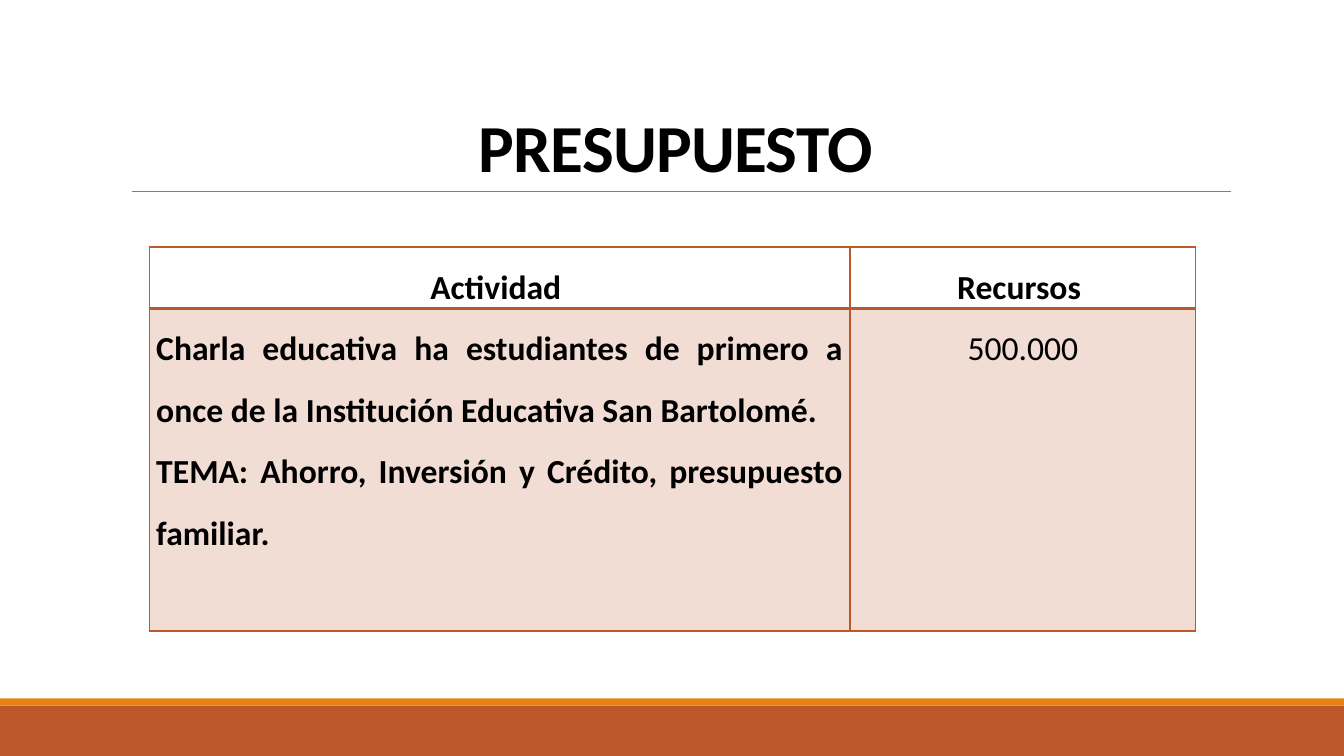
import pptx
import pptx.dml.color
import pptx.enum.shapes
import pptx.enum.text
import pptx.oxml
import pptx.oxml.ns
import pptx.util
from lxml import etree

Inches, Pt = pptx.util.Inches, pptx.util.Pt
ALIGN = pptx.enum.text.PP_ALIGN
qn = pptx.oxml.ns.qn

COLORS = {"rust": "BD582C", "orange": "E48312", "rule": "808080", "text": "000000"}
FONT = "Calibri"
ROWS = [
    [["Actividad "], ["Recursos "]],
    [
        [
            "Charla educativa ha estudiantes de primero a once de la "
            "Institución Educativa San Bartolomé. ",
            "TEMA: Ahorro, Inversión y Crédito, presupuesto familiar.",
        ],
        ["500.000"],
    ],
]


def rgb(name):
    return pptx.dml.color.RGBColor.from_string(COLORS[name])


def write(p, text, size, align, spacing, bold=True):
    p.alignment = align
    p.line_spacing = spacing
    r = p.add_run()
    r.text = text
    r.font.name = FONT
    r.font.size = Pt(size)
    r.font.bold = bold
    r.font.color.rgb = rgb("text")
    return r


def add_footer_bands(slide, left, top, width, height):
    stripe = 0.07
    bands = [("rust", top + stripe, height - stripe), ("orange", top, stripe)]
    for color, y, h in bands:
        sp = slide.shapes.add_shape(
            pptx.enum.shapes.MSO_SHAPE.RECTANGLE,
            Inches(left), Inches(y), Inches(width), Inches(h))
        sp.shadow.inherit = False
        sp.fill.solid()
        sp.fill.fore_color.rgb = rgb(color)
        sp.line.fill.background()


def add_title(slide, left, top, width, height):
    """Fill the title placeholder and draw the rule along its foot."""
    foot = Inches(top + height)
    rule = slide.shapes.add_connector(
        pptx.enum.shapes.MSO_CONNECTOR.STRAIGHT,
        Inches(left + 0.11), foot, Inches(left + width + 0.01), foot)
    rule.line.color.rgb = rgb("rule")
    rule.line.width = Pt(0.5)
    etree.SubElement(rule._element.spPr, qn("a:effectLst"))

    title = slide.shapes.title
    title.left, title.top = Inches(left), Inches(top)
    title.width, title.height = Inches(width), Inches(height)
    tf = title.text_frame
    tf.word_wrap = True
    tf.auto_size = pptx.enum.text.MSO_AUTO_SIZE.NONE
    tf.vertical_anchor = pptx.enum.text.MSO_ANCHOR.BOTTOM
    r = write(tf.paragraphs[0], "PRESUPUESTO", 48, ALIGN.CENTER, 0.85)
    r.font._element.set("spc", "-50")


def set_borders(cell, widths):
    """Draw the cell's edges; widths maps L, R, T and B to points."""
    tcPr = cell._tc.get_or_add_tcPr()
    for side, width in widths.items():
        ln = etree.SubElement(tcPr, qn(f"a:ln{side}"), w=str(Pt(width)))
        fill = etree.SubElement(ln, qn("a:solidFill"))
        etree.SubElement(fill, qn("a:srgbClr"), val=COLORS["rust"])


def set_tint(cell, percent):
    cell.fill.solid()
    cell.fill.fore_color.rgb = rgb("rust")
    color = cell._tc.tcPr.find(qn("a:solidFill")).find(qn("a:srgbClr"))
    etree.SubElement(color, qn("a:alpha"), val=str(percent * 1000))


def add_budget_table(slide, left, top, col_widths, row_heights):
    table = slide.shapes.add_table(
        len(ROWS), len(col_widths), Inches(left), Inches(top),
        Inches(sum(col_widths)), Inches(sum(row_heights))).table
    table.first_row = table.horz_banding = False
    for col, width in zip(table.columns, col_widths):
        col.width = Inches(width)
    for row, height in zip(table.rows, row_heights):
        row.height = Inches(height)

    for i, row in enumerate(ROWS):
        for j, texts in enumerate(row):
            cell = table.cell(i, j)
            cell.margin_left = cell.margin_right = Inches(0.07)
            cell.margin_top = cell.margin_bottom = 0
            is_header, is_activity = i == 0, j == 0
            set_borders(cell, {"L": 1, "R": 1, "T": 1 if is_header else 2,
                               "B": 2 if is_header else 1})
            if is_header:
                cell.fill.background()
            else:
                set_tint(cell, 20)
            justified = is_activity and not is_header
            align = ALIGN.JUSTIFY if justified else ALIGN.CENTER
            tf = cell.text_frame
            for n, text in enumerate(texts):
                p = tf.add_paragraph() if n else tf.paragraphs[0]
                write(p, text, 24, align, 1.5, bold=is_header or is_activity)


def main():
    prs = pptx.Presentation()
    prs.slide_width, prs.slide_height = Inches(13.33), Inches(7.5)
    slide = prs.slides.add_slide(prs.slide_layouts[5])
    add_footer_bands(slide, 0, 6.93, 13.33, 0.57)
    add_title(slide, 1.2, 0.31, 11, 1.59)
    add_budget_table(slide, 1.48, 2.45, [6.95, 3.43], [0.51, 3.2])
    prs.save("out.pptx")


if __name__ == "__main__":
    main()
